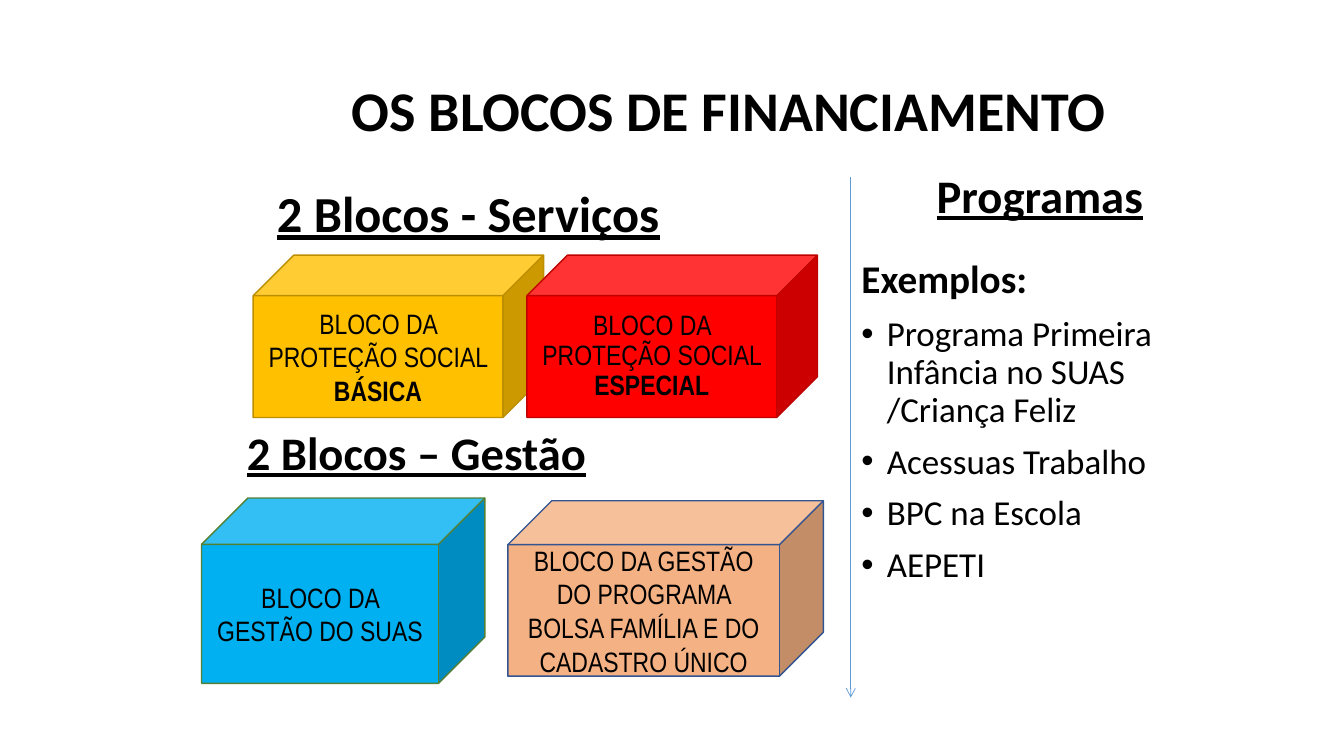
from dataclasses import dataclass

from lxml.etree import SubElement
from pptx import Presentation
from pptx.dml.color import RGBColor
from pptx.enum.shapes import MSO_CONNECTOR, MSO_SHAPE
from pptx.enum.text import MSO_ANCHOR as Anchor, PP_ALIGN as Align
from pptx.oxml.ns import qn
from pptx.util import Cm, Pt


@dataclass(frozen=True)
class Theme:
    text_font: str = "Calibri"
    block_font: str = "Arial Narrow"
    text: str = "000000"
    arrow: str = "5B9BD5"
    basic: str = "FFC000"
    basic_edge: str = "BD8E00"
    special: str = "FF0000"
    special_edge: str = "C00000"
    management: str = "00B0F0"
    management_edge: str = "538035"
    benefits: str = "F4B183"
    benefits_edge: str = "325491"
    title_size: float = 40
    services_size: float = 36
    heading_size: float = 33.3
    examples_size: float = 28
    list_size: float = 25
    block_size: float = 20


theme = Theme()


def write(frame, text, strong="", size=theme.block_size, font=theme.text_font, bold=False,
          underline=False, align=Align.LEFT, spacing=1.0, before=0, bullet=False):
    """Fill the empty first paragraph or add one; strong is a bold ending."""
    paragraph = frame.paragraphs[0]
    if paragraph.runs:
        paragraph = frame.add_paragraph()
    paragraph.alignment = align
    paragraph.line_spacing = spacing
    paragraph.space_before = Pt(before)
    if bullet:
        properties = paragraph._p.get_or_add_pPr()
        properties.set("marL", str(Cm(0.64)))
        properties.set("indent", str(-Cm(0.64)))
        SubElement(properties, qn("a:buFont"), typeface="Arial")
        SubElement(properties, qn("a:buChar"), char="•")
    for words, is_bold in ((text, bold), (strong, True)):
        if words:
            run = paragraph.add_run()
            run.text = words
            run.font.name = font
            run.font.size = Pt(size)
            run.font.bold = is_bold
            run.font.underline = underline
            run.font.color.rgb = RGBColor.from_string(theme.text)


def add_text_frame(left, top, width, height, anchor=Anchor.MIDDLE):
    box = slide.shapes.add_textbox(Cm(left), Cm(top), Cm(width), Cm(height))
    box.text_frame.word_wrap = True
    box.text_frame.vertical_anchor = anchor
    return box.text_frame


presentation = Presentation()
presentation.slide_width = Cm(33.87)
presentation.slide_height = Cm(19.05)
slide = presentation.slides.add_slide(presentation.slide_layouts[6])

# Title and section headings
headings = [
    ("OS BLOCOS DE FINANCIAMENTO", (5.97, 1.73, 24.79, 2.24),
     dict(size=theme.title_size, align=Align.CENTER, spacing=0.9)),
    ("2 Blocos - Serviços", (6.73, 4.6, 12.14, 1.68),
     dict(size=theme.services_size, underline=True, spacing=0.9)),
    ("2 Blocos – Gestão", (5.97, 10.9, 11.66, 1.32),
     dict(size=theme.heading_size, underline=True, spacing=0.7)),
    ("Programas", (21.67, 4.39, 9.07, 1.37),
     dict(size=theme.heading_size, underline=True, align=Align.CENTER, spacing=0.7)),
]
for text, place, style in headings:
    write(add_text_frame(*place), text, bold=True, **style)

# Funding blocks
blocks = [
    ("BLOCO DA PROTEÇÃO SOCIAL ", "BÁSICA", (6.38, 6.43, 7.32, 4.09),
     theme.basic, theme.basic_edge, 1.0),
    ("BLOCO DA PROTEÇÃO SOCIAL ", "ESPECIAL", (13.28, 6.43, 7.32, 4.09),
     theme.special, theme.special_edge, 0.9),
    ("BLOCO DA GESTÃO DO SUAS", "", (5.08, 12.55, 7.14, 4.67),
     theme.management, theme.management_edge, 1.0),
    ("BLOCO DA GESTÃO DO PROGRAMA BOLSA FAMÍLIA E DO CADASTRO ÚNICO", "",
     (12.8, 12.62, 7.95, 4.42), theme.benefits, theme.benefits_edge, 1.0),
]
for text, strong, place, fill, edge, spacing in blocks:
    cube = slide.shapes.add_shape(MSO_SHAPE.CUBE, *map(Cm, place))
    cube.shadow.inherit = False
    cube.fill.solid()
    cube.fill.fore_color.rgb = RGBColor.from_string(fill)
    cube.line.color.rgb = RGBColor.from_string(edge)
    cube.line.width = Pt(1)
    cube.text_frame.word_wrap = True
    cube.text_frame.vertical_anchor = Anchor.MIDDLE
    write(cube.text_frame, text, strong, font=theme.block_font,
          align=Align.CENTER, spacing=spacing)

# Example programmes
examples = add_text_frame(21.46, 6.43, 9.3, 10.03, Anchor.TOP)
write(examples, "Exemplos:", size=theme.examples_size, bold=True, spacing=0.9)
for programme in ("Programa Primeira Infância no SUAS /Criança Feliz",
                  "Acessuas Trabalho", "BPC na Escola", "AEPETI"):
    write(examples, programme, size=theme.list_size, spacing=0.9, before=10, bullet=True)

# Dividing arrow
divider = slide.shapes.add_connector(
    MSO_CONNECTOR.STRAIGHT, Cm(21.44), Cm(4.47), Cm(21.44), Cm(17.58))
divider.line.color.rgb = RGBColor.from_string(theme.arrow)
divider.line.width = Pt(0.5)
SubElement(divider.line._get_or_add_ln(), qn("a:tailEnd"), type="arrow")
SubElement(divider._element.spPr, qn("a:effectLst"))

presentation.save("out.pptx")
